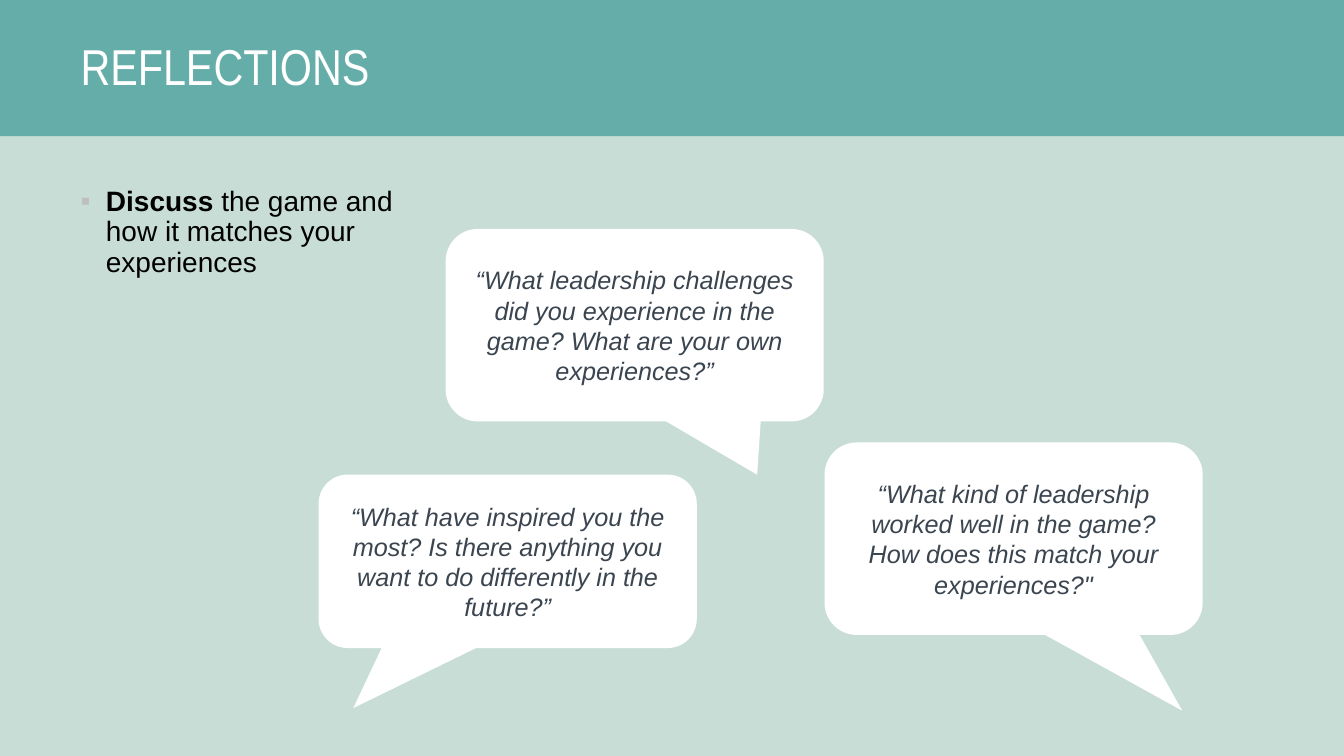
from lxml import etree
from pptx import Presentation
from pptx import util as u
from pptx.dml.color import RGBColor
from pptx.enum import shapes, text
from pptx.oxml.ns import qn

COLOURS = {
    "background": "B6D4CD",
    "panel": "C8DDD6",
    "header": "65ADA8",
    "white": "FFFFFF",
    "black": "000000",
    "quote": "3B4550",
    "bullet": "BFBFBF",
}
WIDTH, HEIGHT, HEADER_HEIGHT = 33.87, 19.05, 3.43
MARGIN = 1.78
BUBBLE_WIDTH = 9.53

# left, top, height, tail adjustments, question
BUBBLES = [
    (11.23, 5.77, 4.85, (0.324, 0.777, 0.167),
     "“What leadership challenges did you experience in the game? "
     "What are your own experiences?”"),
    (8.03, 11.96, 4.37, (-0.408, 0.846, 0.167),
     "“What have inspired you the most? Is there anything you want "
     "to do differently in the future?”"),
    (20.78, 11.15, 4.85, (0.446, 0.894, 0.167),
     "“What kind of leadership worked well in the game? "
     "How does this match your experiences?\""),
]


def rgb(name):
    return RGBColor.from_string(COLOURS[name])


def add_filled_shape(slide, kind, box, colour):
    shape = slide.shapes.add_shape(kind, *(u.Cm(length) for length in box))
    shape.shadow.inherit = False
    shape.fill.solid()
    shape.fill.fore_color.rgb = rgb(colour)
    shape.line.fill.background()
    return shape


def add_text_box(slide, box, anchor):
    shape = slide.shapes.add_textbox(*(u.Cm(length) for length in box))
    shape.text_frame.word_wrap = True
    shape.text_frame.vertical_anchor = anchor
    paragraph = shape.text_frame.paragraphs[0]
    paragraph.line_spacing = 0.9
    return paragraph


def add_run(paragraph, words, size, colour, font="Arial", bold=False, italic=False):
    run = paragraph.add_run()
    run.text = words
    run.font.name = font
    run.font.size = u.Pt(size)
    run.font.bold = bold
    run.font.italic = italic
    run.font.color.rgb = rgb(colour)


def add_bullet(paragraph):
    properties = paragraph._p.get_or_add_pPr()
    properties.set("marL", str(u.Cm(0.64)))
    properties.set("indent", str(-u.Cm(0.64)))
    colour = etree.SubElement(properties, qn("a:buClr"))
    etree.SubElement(colour, qn("a:srgbClr"), val=COLOURS["bullet"])
    etree.SubElement(properties, qn("a:buFont"), typeface="Arial")
    etree.SubElement(properties, qn("a:buChar"), char="▪")


def add_bubble(slide, left, top, height, adjustments, question):
    bubble = add_filled_shape(
        slide, shapes.MSO_SHAPE.ROUNDED_RECTANGULAR_CALLOUT,
        (left, top, BUBBLE_WIDTH, height), "white")
    for index, value in enumerate(adjustments):
        bubble.adjustments[index] = value
    frame = bubble.text_frame
    frame.word_wrap = True
    frame.vertical_anchor = text.MSO_ANCHOR.MIDDLE
    paragraph = frame.paragraphs[0]
    paragraph.alignment = text.PP_ALIGN.CENTER
    add_run(paragraph, question, 18, "quote", italic=True)


def main():
    presentation = Presentation()
    presentation.slide_width = u.Cm(WIDTH)
    presentation.slide_height = u.Cm(HEIGHT)
    slide = presentation.slides.add_slide(presentation.slide_layouts[6])

    # Background, panel and header band
    slide.background.fill.solid()
    slide.background.fill.fore_color.rgb = rgb("background")
    rectangle = shapes.MSO_SHAPE.RECTANGLE
    add_filled_shape(slide, rectangle,
                     (0, HEADER_HEIGHT, WIDTH, HEIGHT - HEADER_HEIGHT), "panel")
    add_filled_shape(slide, rectangle, (0, 0, WIDTH, HEADER_HEIGHT), "header")

    # Title
    title = add_text_box(slide, (MARGIN, 0.23, 30.28, 3.02), text.MSO_ANCHOR.MIDDLE)
    add_run(title, "REFLECTIONS", 36, "white", font="Arial Narrow")

    # Discussion prompt
    prompt = add_text_box(slide, (MARGIN, 4.6, 9.45, 13.11), text.MSO_ANCHOR.TOP)
    add_bullet(prompt)
    add_run(prompt, "Discuss", 20, "black", bold=True)
    add_run(prompt, " the game and how it matches your experiences", 20, "black")

    # Question bubbles
    for bubble in BUBBLES:
        add_bubble(slide, *bubble)

    presentation.save("out.pptx")


if __name__ == "__main__":
    main()
